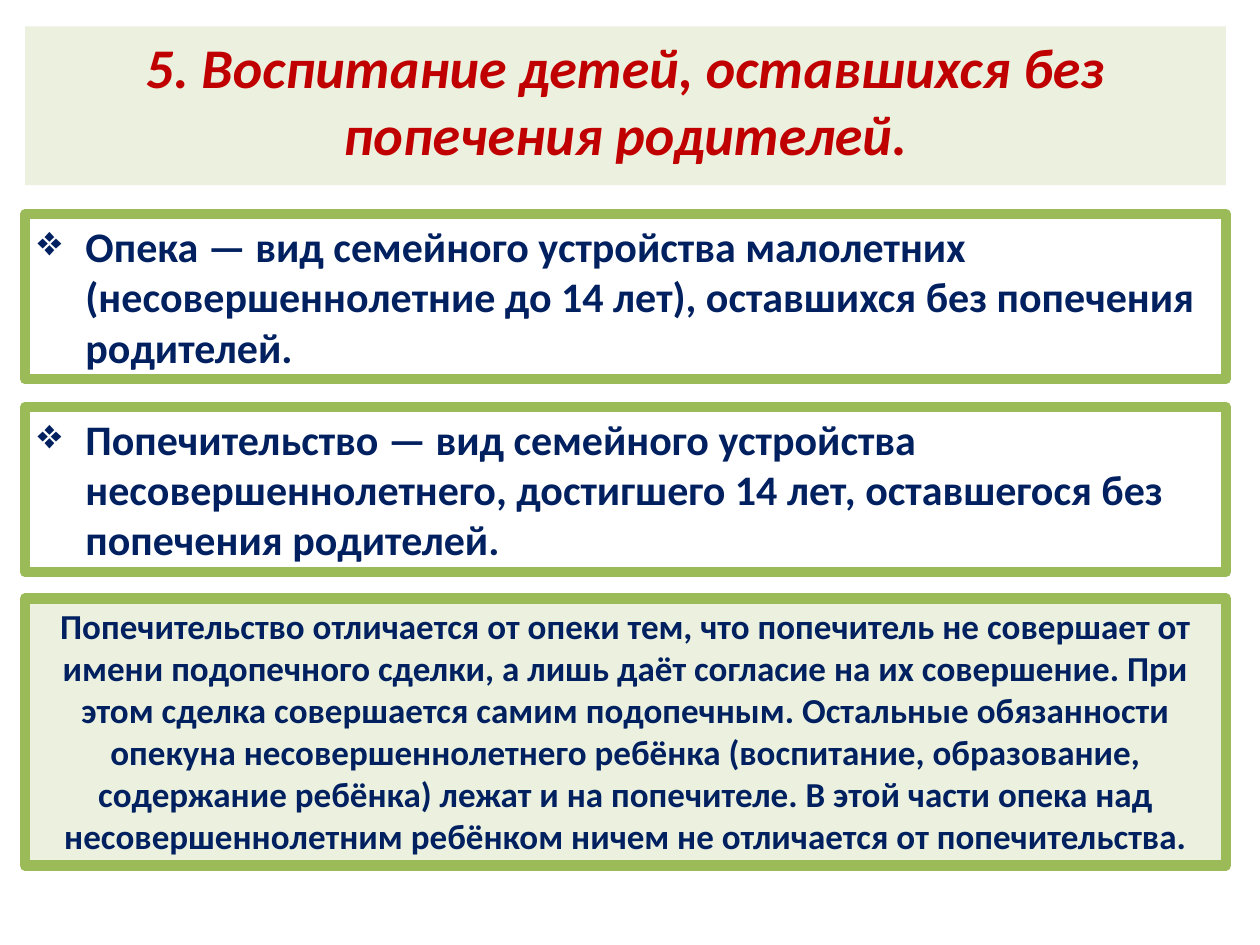
import pptx
import pptx.dml.color
import pptx.enum.shapes
import pptx.enum.text
import pptx.oxml.ns
import pptx.util
from lxml import etree

Inches = pptx.util.Inches
Pt = pptx.util.Pt
Align = pptx.enum.text.PP_ALIGN
Anchor = pptx.enum.text.MSO_ANCHOR
AutoSize = pptx.enum.text.MSO_AUTO_SIZE
qn = pptx.oxml.ns.qn


def rgb(value):
    return pptx.dml.color.RGBColor.from_string(value)


THEME = {
    "font": "Calibri",
    "title": rgb("C00000"),
    "text": rgb("002060"),
    "border": rgb("9BBB59"),
    "panel": rgb("EBF1DE"),
    "title_size": Pt(32),
    "definition_size": Pt(24),
    "note_size": Pt(20),
    "border_width": Pt(6),
}
LEFT, WIDTH = Inches(0.2), Inches(9.53)
BULLET_INDENT = Inches(0.38)


def format_text(paragraph, size, color):
    paragraph.font.name = THEME["font"]
    paragraph.font.size = size
    paragraph.font.bold = True
    paragraph.font.color.rgb = color


presentation = pptx.Presentation()
presentation.slide_width = Inches(10)
presentation.slide_height = Inches(7.5)
slide = presentation.slides.add_slide(presentation.slide_layouts[5])

# Title band
title = slide.shapes.title
title.left, title.top = LEFT, Inches(0.21)
title.width, title.height = WIDTH, Inches(1.26)
title.fill.solid()
title.fill.fore_color.rgb = THEME["panel"]
title.text_frame.text = "5. Воспитание детей, оставшихся без попечения родителей."
title.text_frame.auto_size = AutoSize.NONE
title.text_frame.vertical_anchor = Anchor.TOP
paragraph = title.text_frame.paragraphs[0]
paragraph.alignment = Align.CENTER
format_text(paragraph, THEME["title_size"], THEME["title"])
paragraph.font.italic = True

# Framed boxes: top, height, is a bulleted definition, text
boxes = [
    (1.7, 1.31, True,
     "Опека — вид семейного устройства малолетних (несовершеннолетние до 14 лет), "
     "оставшихся без попечения родителей."),
    (3.23, 1.31, True,
     "Попечительство — вид семейного устройства несовершеннолетнего, достигшего "
     "14 лет, оставшегося без попечения родителей."),
    (4.75, 2.12, False,
     "Попечительство отличается от опеки тем, что попечитель не совершает от имени "
     "подопечного сделки, а лишь даёт согласие на их совершение. При этом сделка "
     "совершается самим подопечным. Остальные обязанности опекуна "
     "несовершеннолетнего ребёнка (воспитание, образование, содержание ребёнка) "
     "лежат и на попечителе. В этой части опека над несовершеннолетним ребёнком "
     "ничем не отличается от попечительства."),
]
for top, height, is_definition, text in boxes:
    shape = slide.shapes.add_shape(
        pptx.enum.shapes.MSO_SHAPE.RECTANGLE, LEFT, Inches(top), WIDTH, Inches(height))
    shape.shadow.inherit = False
    shape.line.color.rgb = THEME["border"]
    shape.line.width = THEME["border_width"]
    etree.SubElement(shape.line._get_or_add_ln(), qn("a:round"))

    text_frame = shape.text_frame
    text_frame.word_wrap = True
    text_frame.auto_size = AutoSize.SHAPE_TO_FIT_TEXT
    text_frame.vertical_anchor = Anchor.TOP
    text_frame.text = text
    paragraph = text_frame.paragraphs[0]

    if is_definition:
        shape.fill.background()
        paragraph.alignment = Align.LEFT
        properties = paragraph._p.get_or_add_pPr()
        properties.set("marL", str(BULLET_INDENT))
        properties.set("indent", str(-BULLET_INDENT))
        etree.SubElement(properties, qn("a:buChar")).set("char", "❖")
        format_text(paragraph, THEME["definition_size"], THEME["text"])
    else:
        shape.fill.solid()
        shape.fill.fore_color.rgb = THEME["panel"]
        paragraph.alignment = Align.CENTER
        format_text(paragraph, THEME["note_size"], THEME["text"])

presentation.save("out.pptx")
